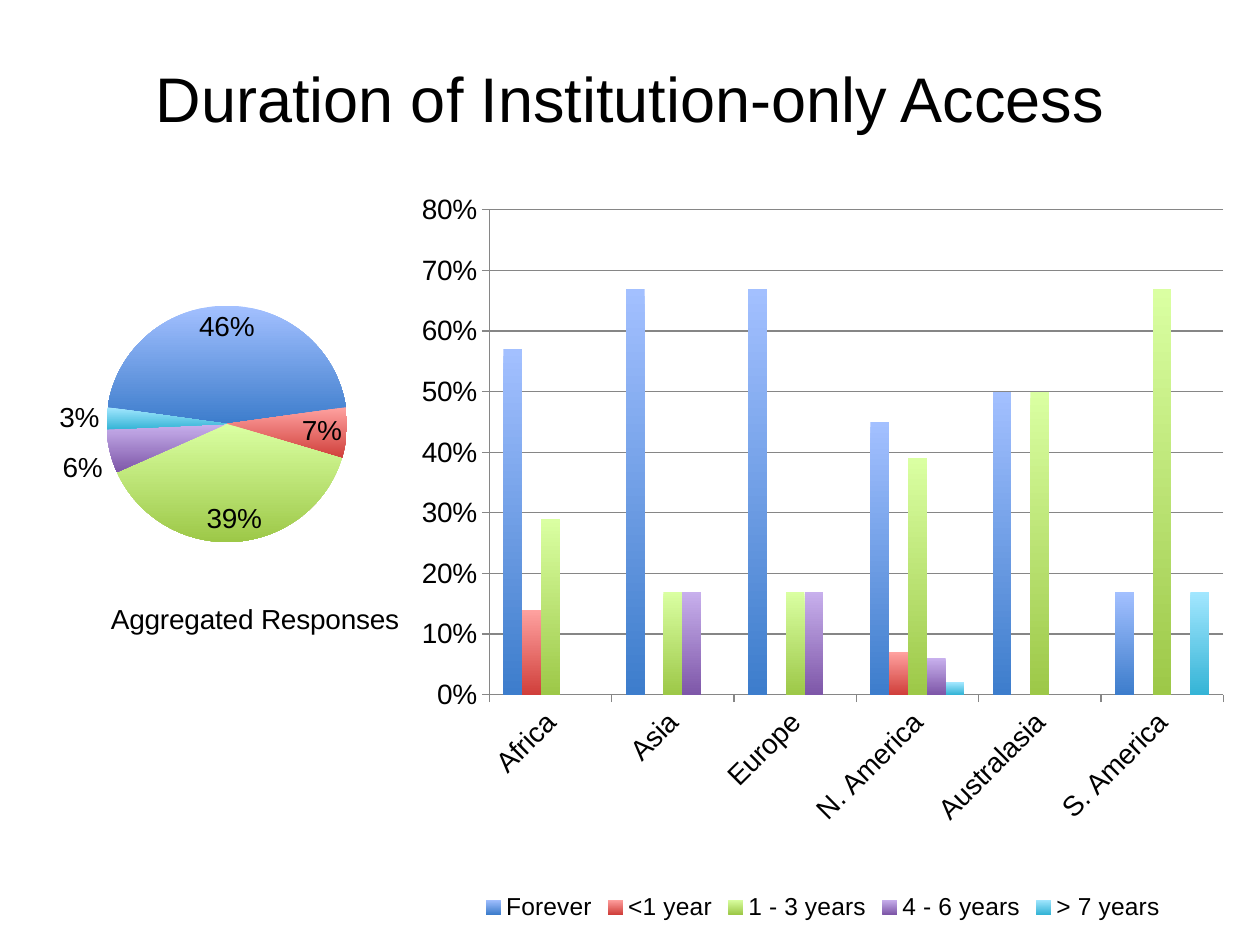
from pptx import Presentation
from pptx.chart.data import CategoryChartData as Data
from pptx.dml.color import RGBColor
from pptx.enum.chart import XL_CHART_TYPE as Kind, XL_LABEL_POSITION as Spot
from pptx.enum.chart import XL_LEGEND_POSITION as Side, XL_TICK_MARK as Tick
from pptx.enum.text import MSO_ANCHOR as Anchor, PP_ALIGN as Align
from pptx.oxml import parse_xml
from pptx.oxml.ns import nsdecls, qn
from pptx.util import Emu, Pt

PX = 914400 / 126
FONT = "Arial"
BLACK = RGBColor(0x00, 0x00, 0x00)
GREY = RGBColor(0x86, 0x86, 0x86)
SHADES = [  # top and bottom of each gradient
    (RGBColor(0xA3, 0xC0, 0xFF), RGBColor(0x3D, 0x7D, 0xCC)),
    (RGBColor(0xFF, 0xA2, 0xA0), RGBColor(0xD0, 0x3F, 0x3B)),
    (RGBColor(0xDA, 0xFF, 0xA2), RGBColor(0x9D, 0xC8, 0x48)),
    (RGBColor(0xC8, 0xB0, 0xED), RGBColor(0x7E, 0x57, 0xA8)),
    (RGBColor(0xA3, 0xE7, 0xFF), RGBColor(0x35, 0xB4, 0xD6)),
]


def place(host, **spots):
    """Give a plot area or chart title a manual layout in chart fractions."""
    old = host.find(qn("c:layout"))
    at = 0 if old is None else host.index(old)
    if old is not None:
        host.remove(old)
    inner = '<c:layoutTarget val="inner"/>' if "w" in spots else ""
    modes = "".join(f'<c:{k}Mode val="edge"/>' for k in "xy")
    vals = "".join(f'<c:{k} val="{v}"/>' for k, v in spots.items())
    host.insert(at, parse_xml(
        f'<c:layout {nsdecls("c")}><c:manualLayout>{inner}{modes}{vals}'
        "</c:manualLayout></c:layout>"))


def shade(fmt, pair):
    """Fill from light at the top to dark at the bottom, with no outline."""
    fmt.fill.gradient()
    fmt.fill.gradient_angle = 270
    for stop, tone in zip(fmt.fill.gradient_stops, pair):
        stop.color.rgb = tone
    fmt.line.fill.background()


deck = Presentation()
deck.slide_width, deck.slide_height = [Emu(round(n * PX)) for n in (1260, 945)]
slide = deck.slides.add_slide(deck.slide_layouts[5])

# Title
title = slide.shapes.title
title.left, title.top, title.width, title.height = [
    Emu(round(n * PX)) for n in (63, 38, 1134, 118)]
title.text_frame.vertical_anchor = Anchor.MIDDLE
para = title.text_frame.paragraphs[0]
para.alignment = Align.CENTER
run = para.add_run()
run.text = "Duration of Institution-only Access"
run.font.size, run.font.name = Pt(36), FONT
run.font.color.rgb = BLACK

# Both charts
bars = Data(number_format="0%")
bars.categories = ["Africa", "Asia", "Europe",
                   "N. America", "Australasia", "S. America"]
for name, vals in [
    ("Forever", (0.57, 0.67, 0.67, 0.45, 0.5, 0.17)),
    ("<1 year", (0.14, None, None, 0.07, None, None)),
    ("1 - 3 years", (0.29, 0.17, 0.17, 0.39, 0.5, 0.67)),
    ("4 - 6 years", (0, 0.17, 0.17, 0.06, None, None)),
    ("> 7 years", (None, None, None, 0.02, None, 0.17)),
]:
    bars.add_series(name, vals)
pie = Data()
pie.categories = ["1", "2", "3", "4", "5"]
pie.add_series("Series 1", (46, 7, 39, 6, 3))

charts = []
for kind, data, box, size, spots in [
    (Kind.COLUMN_CLUSTERED, bars, (406, 180, 834, 746), 16,
     dict(x=0.1, y=0.04, w=0.88, h=0.65)),
    (Kind.PIE, pie, (-5, 273, 504, 370), 14,
     dict(x=0.22, y=0.09, w=0.48, h=0.65)),
]:
    box = [Emu(round(n * PX)) for n in box]
    chart = slide.shapes.add_chart(kind, *box, data).chart
    chart.font.size, chart.font.name = Pt(size), FONT
    chart.font.color.rgb = BLACK
    place(chart.element.find(".//" + qn("c:plotArea")), **spots)
    charts.append(chart)
columns, round_pie = charts

# Columns by region
columns.has_title = False
columns.plots[0].gap_width = 150
columns.plots[0].vary_by_categories = False
for series, pair in zip(columns.plots[0].series, SHADES):
    shade(series.format, pair)
rates, lands = columns.value_axis, columns.category_axis
rates.minimum_scale, rates.maximum_scale, rates.major_unit = 0, 0.8, 0.1
rates.tick_labels.number_format = "0%"
rates.tick_labels.number_format_is_linked = False
rates.has_major_gridlines = True
for axis in (rates, lands):
    axis.major_tick_mark = Tick.OUTSIDE
    axis.tick_labels.font.size = Pt(16)
for part in (rates, lands, rates.major_gridlines):
    part.format.line.color.rgb = GREY
    part.format.line.width = Pt(0.75)
slant = columns.element.find(".//" + qn("c:catAx") + "//" + qn("a:bodyPr"))
slant.set("rot", "-2700000")
columns.has_legend = True
columns.legend.position = Side.BOTTOM
columns.legend.include_in_layout = False
columns.legend.font.size = Pt(14)

# Pie of all answers
round_pie.has_legend = False
para = round_pie.chart_title.text_frame.paragraphs[0]
run = para.add_run()
run.text = "Aggregated Responses"
run.font.size, run.font.name, run.font.bold = Pt(16), FONT, False
run.font.color.rgb = BLACK
place(round_pie.element.find(".//" + qn("c:title")), x=0.22, y=0.89)
whole = round_pie.plots[0].series[0]
for i, pair in enumerate(SHADES):
    shade(whole.points[i].format, pair)
tags = whole.data_labels
tags.show_percentage, tags.show_value = True, False
tags.number_format, tags.number_format_is_linked = "0%", False
tags.position = Spot.BEST_FIT
tags.font.size, tags.font.name = Pt(16), FONT
tags.font.color.rgb = BLACK
round_pie.element.find(".//" + qn("c:pieChart")).append(
    parse_xml(f'<c:firstSliceAng {nsdecls("c")} val="278"/>'))

deck.save("out.pptx")
